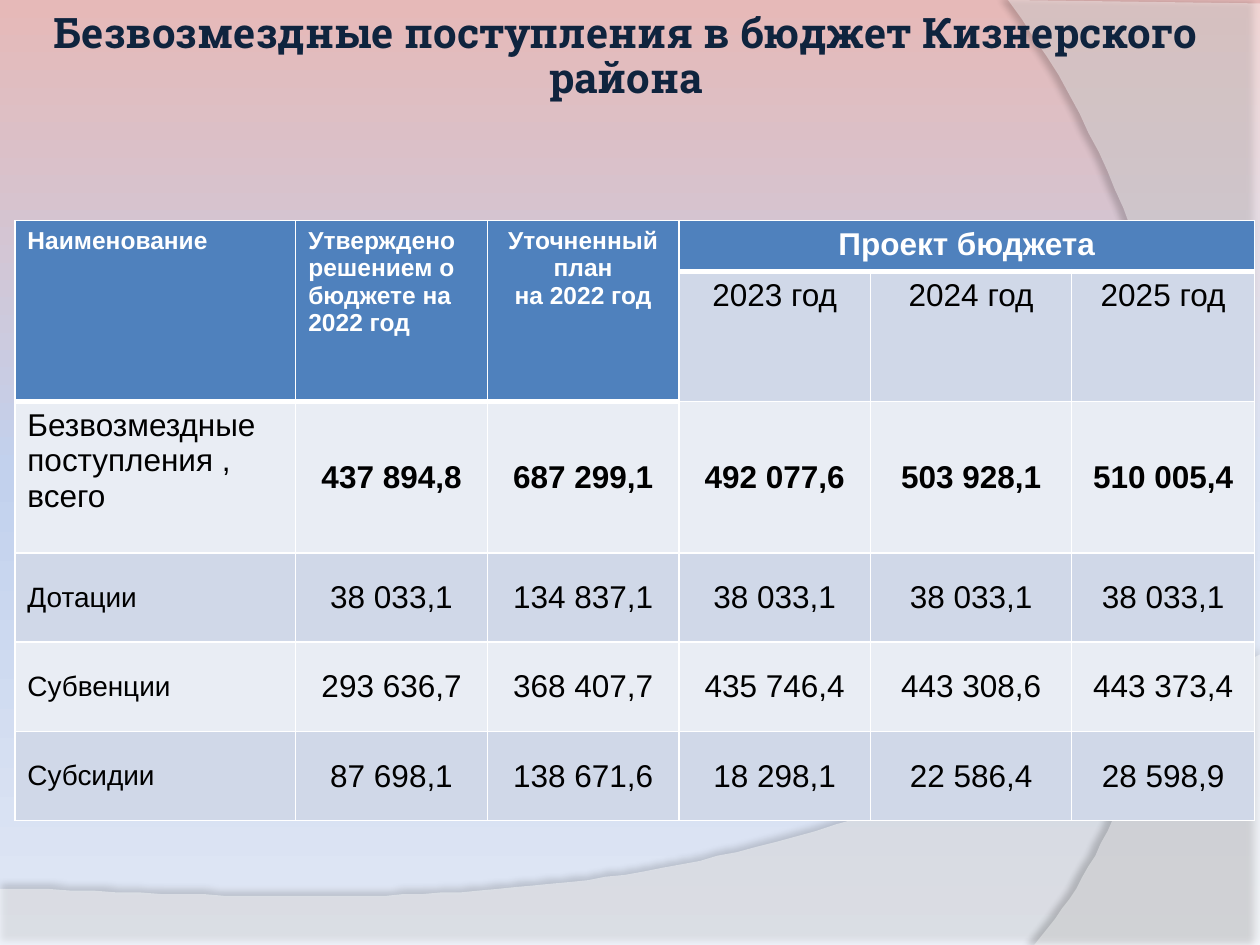
from dataclasses import dataclass

import pptx
import pptx.dml.color
import pptx.enum.text
import pptx.oxml
import pptx.oxml.ns
import pptx.util
from pptx.util import Pt

ALIGN = pptx.enum.text.PP_ALIGN
ANCHOR = pptx.enum.text.MSO_ANCHOR
NAMESPACE = pptx.oxml.ns.nsdecls("a")

WHITE, BLACK, NAVY = "FFFFFF", "000000", "0F243E"
HEADER_FILL = "4F81BD"
BAND_FILLS = ["D0D8E8", "E9EDF4"]

COLUMN_WIDTHS = [160.5, 109.5, 109.5, 109.5, 115, 104.5]
ROW_HEIGHTS = [29, 74.5, 86.5, 51, 51, 51]
YEARS = ["2023 год", "2024 год", "2025 год"]
BACKGROUND_STOPS = [(0, "E6B9B8"), (50, "C2D1ED"), (100, "E1E8F5")]


@dataclass
class Wave:
    corners: list[tuple[float, float]]
    curve: list[tuple[float, float]]
    opacity: int
    shadow_opacity: int
    shadow_distance: float
    shadow_angle: int


@dataclass
class Heading:
    text: str
    column: int
    last_row: int
    last_column: int
    size: int = 14
    align: ALIGN = ALIGN.CENTER


@dataclass
class Income:
    name: str
    amounts: list[str]
    name_size: int = 16
    name_anchor: ANCHOR = ANCHOR.MIDDLE
    bold: bool = False


WAVES = [
    Wave([(0, 507.5), (0, 540.5), (720, 540.5), (720, 374.5)],
         [(720, 374.5), (402.5, 525), (281.5, 517.5), (0, 507.5)], 45, 35, 3.5, 270),
    Wave([(720, 1.5), (720, 540), (591, 540)],
         [(591, 540), (673, 445.5), (733, 216), (576, 0)], 40, 45, 4, 180),
]
HEADINGS = [
    Heading("Наименование", 0, 1, 0, align=ALIGN.LEFT),
    Heading("Утверждено решением о бюджете на 2022 год", 1, 1, 1, align=ALIGN.LEFT),
    Heading("Уточненный план\nна 2022 год", 2, 1, 2),
    Heading("Проект бюджета", 3, 0, 5, size=18),
]
INCOMES = [
    Income("Безвозмездные поступления , всего",
           ["437 894,8", "687 299,1", "492 077,6", "503 928,1", "510 005,4"],
           18, ANCHOR.TOP, True),
    Income("Дотации", ["38 033,1", "134 837,1", "38 033,1", "38 033,1", "38 033,1"]),
    Income("Субвенции", ["293 636,7", "368 407,7", "435 746,4", "443 308,6", "443 373,4"]),
    Income("Субсидии", ["87 698,1", "138 671,6", "18 298,1", "22 586,4", "28 598,9"]),
]


def color(value: str) -> pptx.dml.color.RGBColor:
    return pptx.dml.color.RGBColor.from_string(value)


def write(frame, text: str, *, size=18, font="Arial", fill=BLACK, bold=False,
          align=ALIGN.CENTER, spacing=None) -> None:
    """Fill a text frame, one paragraph for each line of the text."""
    for index, line in enumerate(text.split("\n")):
        para = frame.add_paragraph() if index else frame.paragraphs[0]
        para.alignment = align
        para.line_spacing = spacing
        span = para.add_run()
        span.text = line
        span.font.name = font
        span.font.size = Pt(size)
        span.font.bold = bold
        span.font.color.rgb = color(fill)


def paint_background(page) -> None:
    page.background.fill.solid()
    properties = page.background.fill._xPr
    stops = "".join(f'<a:gs pos="{position * 1000}"><a:srgbClr val="{value}"/></a:gs>'
                    for position, value in BACKGROUND_STOPS)
    gradient = pptx.oxml.parse_xml(
        f'<a:gradFill {NAMESPACE} rotWithShape="1"><a:gsLst>{stops}</a:gsLst>'
        '<a:lin ang="5400000" scaled="0"/></a:gradFill>')
    properties.replace(properties.find(pptx.oxml.ns.qn("a:solidFill")), gradient)


def bezier(curve: list[tuple[float, float]], steps: int = 60) -> list[tuple[float, float]]:
    """Points along a cubic curve, without its start."""
    points = []
    for step in range(1, steps + 1):
        t = step / steps
        weights = [(1 - t) ** 3, 3 * t * (1 - t) ** 2, 3 * t * t * (1 - t), t ** 3]
        points.append(tuple(sum(w * point[axis] for w, point in zip(weights, curve))
                            for axis in (0, 1)))
    return points


def draw_wave(page, wave: Wave) -> None:
    start, *corners = wave.corners
    builder = page.shapes.build_freeform(*start, scale=Pt(1))
    builder.add_line_segments(corners + bezier(wave.curve), close=True)
    shape = builder.convert_to_shape()
    shape.line.fill.background()
    shape.fill.solid()
    shape.fill.fore_color.rgb = color(WHITE)
    tint = shape._element.spPr.find(".//" + pptx.oxml.ns.qn("a:solidFill"))[0]
    tint.append(pptx.oxml.parse_xml(f'<a:alpha {NAMESPACE} val="{wave.opacity * 1000}"/>'))
    shape._element.spPr.append(pptx.oxml.parse_xml(
        f'<a:effectLst {NAMESPACE}><a:outerShdw blurRad="{Pt(4)}" '
        f'dist="{Pt(wave.shadow_distance)}" dir="{wave.shadow_angle * 60000}" '
        f'algn="ctr" rotWithShape="0"><a:srgbClr val="{BLACK}">'
        f'<a:alpha val="{wave.shadow_opacity * 1000}"/></a:srgbClr>'
        '</a:outerShdw></a:effectLst>'))


def add_title(page) -> None:
    box = page.shapes.add_textbox(Pt(14.5), Pt(3.5), Pt(686), Pt(65.5))
    box.text_frame.word_wrap = True
    write(box.text_frame, "Безвозмездные поступления в бюджет Кизнерского района",
          size=24, font="Roboto Slab", fill=NAVY, bold=True, spacing=0.9)


def is_heading(row: int, column: int) -> bool:
    return row == 0 or (row == 1 and column < 3)


def style_cell(cell, row: int, column: int) -> None:
    """Band fill and white borders, thick under the headings."""
    heading = is_heading(row, column)
    above = row > 0 and is_heading(row - 1, column)
    widths = {
        "lnL": 1, "lnR": 1,
        "lnT": 3 if above and not heading else 1,
        "lnB": 3 if heading and not is_heading(row + 1, column) else 1,
    }
    properties = cell._tc.get_or_add_tcPr()
    for side, width in widths.items():
        properties.append(pptx.oxml.parse_xml(
            f'<a:{side} {NAMESPACE} w="{Pt(width)}"><a:solidFill>'
            f'<a:srgbClr val="{WHITE}"/></a:solidFill></a:{side}>'))
    cell.fill.solid()
    cell.fill.fore_color.rgb = color(HEADER_FILL if heading else BAND_FILLS[(row + 1) % 2])


def add_income_table(page) -> None:
    table = page.shapes.add_table(
        len(ROW_HEIGHTS), len(COLUMN_WIDTHS), Pt(8.5), Pt(126),
        Pt(sum(COLUMN_WIDTHS)), Pt(sum(ROW_HEIGHTS))).table
    for column, width in enumerate(COLUMN_WIDTHS):
        table.columns[column].width = Pt(width)
    for row, height in enumerate(ROW_HEIGHTS):
        table.rows[row].height = Pt(height)
        for column in range(len(COLUMN_WIDTHS)):
            style_cell(table.cell(row, column), row, column)

    for heading in HEADINGS:
        cell = table.cell(0, heading.column)
        cell.merge(table.cell(heading.last_row, heading.last_column))
        write(cell.text_frame, heading.text, size=heading.size, fill=WHITE,
              bold=True, align=heading.align)
    for column, year in enumerate(YEARS, 3):
        write(table.cell(1, column).text_frame, year)
    for row, income in enumerate(INCOMES, 2):
        name = table.cell(row, 0)
        name.vertical_anchor = income.name_anchor
        write(name.text_frame, income.name, size=income.name_size, align=ALIGN.LEFT)
        for column, amount in enumerate(income.amounts, 1):
            cell = table.cell(row, column)
            cell.vertical_anchor = ANCHOR.MIDDLE
            write(cell.text_frame, amount, bold=income.bold)


def main() -> None:
    deck = pptx.Presentation()
    deck.slide_width, deck.slide_height = Pt(720), Pt(540)
    page = deck.slides.add_slide(deck.slide_layouts[6])
    paint_background(page)
    for wave in WAVES:
        draw_wave(page, wave)
    add_title(page)
    add_income_table(page)
    deck.save("out.pptx")


if __name__ == "__main__":
    main()
